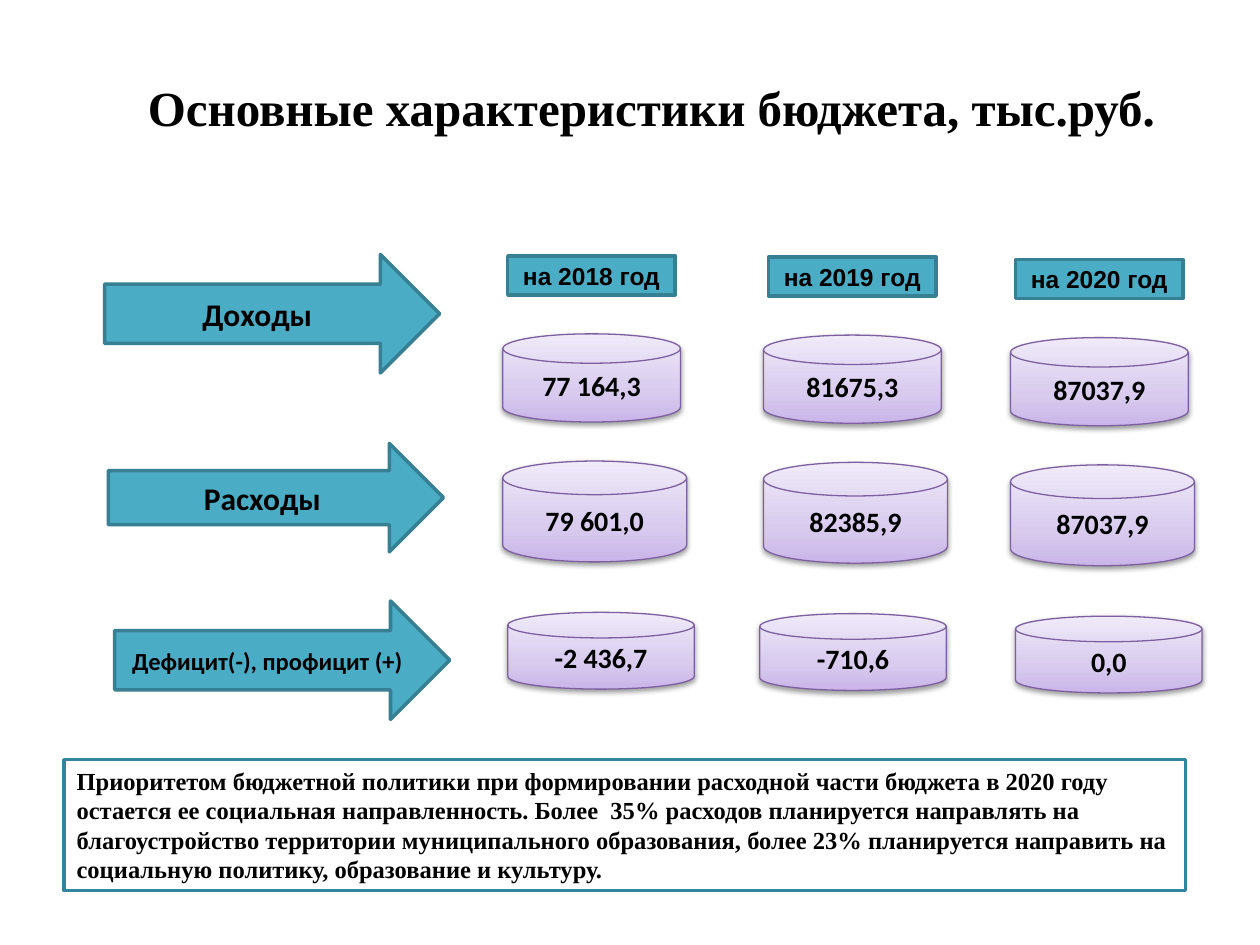
import pptx
import pptx.util
import pptx.oxml
import pptx.oxml.ns
import pptx.dml.color
import pptx.enum.shapes
import pptx.enum.text

Inches = pptx.util.Inches
Pt = pptx.util.Pt
Kind = pptx.enum.shapes.MSO_SHAPE
Align = pptx.enum.text.PP_ALIGN
Anchor = pptx.enum.text.MSO_ANCHOR

SHADOW = """<a:effectLst {ns}>
  <a:outerShdw blurRad="{blur}" dist="{dist}" dir="5400000" rotWithShape="0">
    <a:srgbClr val="000000"><a:alpha val="38000"/></a:srgbClr>
  </a:outerShdw>
</a:effectLst>"""


def color(code):
    return pptx.dml.color.RGBColor.from_string(code)


class Board:
    teal, edge, frame = "4BACC6", "377F92", "31859C"
    violet = "7D60A0"
    stops = ((0, "C9B5E8"), (35, "D8CBEE"), (100, "F0EAF9"))
    ink, white = "000000", "FFFFFF"
    sans, head, serif = "Calibri", "Arial", "Times New Roman"

    def __init__(self, slide):
        self.slide = slide

    def label_text(self, shape, text, size, font, align=Align.CENTER, anchor=Anchor.MIDDLE):
        frame = shape.text_frame
        frame.word_wrap = True
        frame.vertical_anchor = anchor
        para = frame.paragraphs[0]
        para.alignment = align
        run = para.add_run()
        run.text = text
        run.font.size = Pt(size)
        run.font.name = font
        run.font.bold = True
        run.font.color.rgb = color(self.ink)

    def shape(self, kind, box, line, width):
        item = self.slide.shapes.add_shape(kind, *map(Inches, box))
        item.line.color.rgb = color(line)
        item.line.width = Pt(width)
        item.shadow.inherit = False
        return item

    def solid(self, kind, box, fill, line):
        item = self.shape(kind, box, line, 2)
        item.fill.solid()
        item.fill.fore_color.rgb = color(fill)
        return item

    def title(self, box, text):
        item = self.slide.shapes.add_textbox(*map(Inches, box))
        self.label_text(item, text, 28, self.serif)

    def arrow(self, box, text, size):
        item = self.solid(Kind.RIGHT_ARROW, box, self.teal, self.edge)
        self.label_text(item, text, size, self.sans)

    def label(self, box, text):
        item = self.solid(Kind.RECTANGLE, box, self.teal, self.edge)
        self.label_text(item, text, 14, self.head)

    def note(self, box, text):
        item = self.solid(Kind.RECTANGLE, box, self.white, self.frame)
        self.label_text(item, text, 14, self.serif, Align.LEFT, Anchor.TOP)

    def disk(self, box, text):
        item = self.shape(Kind.FLOWCHART_MAGNETIC_DISK, box, self.violet, 0.75)
        ns = pptx.oxml.ns.nsdecls("a")
        # Three-stop gradient running upwards
        item.fill.gradient()
        item.fill.gradient_angle = 90
        props = item._element.spPr
        stops = props.find(".//" + pptx.oxml.ns.qn("a:gsLst"))
        for old in list(stops):
            stops.remove(old)
        for place, code in self.stops:
            stops.append(pptx.oxml.parse_xml(
                f'<a:gs {ns} pos="{place * 1000}"><a:srgbClr val="{code}"/></a:gs>'))
        # Soft shadow below
        plain = props.find(pptx.oxml.ns.qn("a:effectLst"))
        soft = SHADOW.format(ns=ns, blur=int(Pt(3.1)), dist=int(Pt(1.6)))
        props.replace(plain, pptx.oxml.parse_xml(soft))
        self.label_text(item, text, 16, self.sans)


def main():
    deck = pptx.Presentation()
    deck.slide_width, deck.slide_height = Inches(10), Inches(7.5)
    board = Board(deck.slides.add_slide(deck.slide_layouts[6]))

    # Title
    board.title((0.67, 0.55, 9, 0.59), "Основные характеристики бюджета, тыс.руб.")

    # Row arrows
    for left, top, high, text, size in (
        (0.83, 2.02, 0.94, "Доходы", 18),
        (0.86, 3.52, 0.86, "Расходы", 18),
        (0.91, 4.77, 0.94, "Дефицит(-), профицит (+)", 14),
    ):
        board.arrow((left, top, 2.66, high), text, size)

    # Year columns: left edge, drop, year, values by row
    cols = (
        (3.99, 0, 2018, ("77 164,3", "79 601,0", "-2 436,7")),
        (6.06, 0.01, 2019, ("81675,3", "82385,9", "-710,6")),
        (8.02, 0.03, 2020, ("87037,9", "87037,9", "0,0")),
    )
    # Disk rows: top, width, height, shift in each column
    rows = (
        (2.65, 1.41, 0.7, (0, 0, 0)),
        (3.66, 1.46, 0.8, (0, 0, 0)),
        (4.86, 1.48, 0.61, (0.04, -0.03, 0.04)),
    )
    for col, (left, drop, year, values) in enumerate(cols):
        board.label((left + 0.04, 2.03 + drop, 1.33, 0.31), f"на {year} год")
        for (top, wide, high, shift), value in zip(rows, values):
            board.disk((left + shift[col], top + drop, wide, high), value)

    # Closing note
    board.note((0.51, 6.03, 8.9, 1.04), (
        "Приоритетом бюджетной политики при формировании расходной части бюджета "
        "в 2020 году остается ее социальная направленность. Более  35% расходов "
        "планируется направлять на благоустройство территории муниципального "
        "образования, более 23% планируется направить на социальную политику, "
        "образование и культуру."))

    deck.save("out.pptx")


if __name__ == "__main__":
    main()
